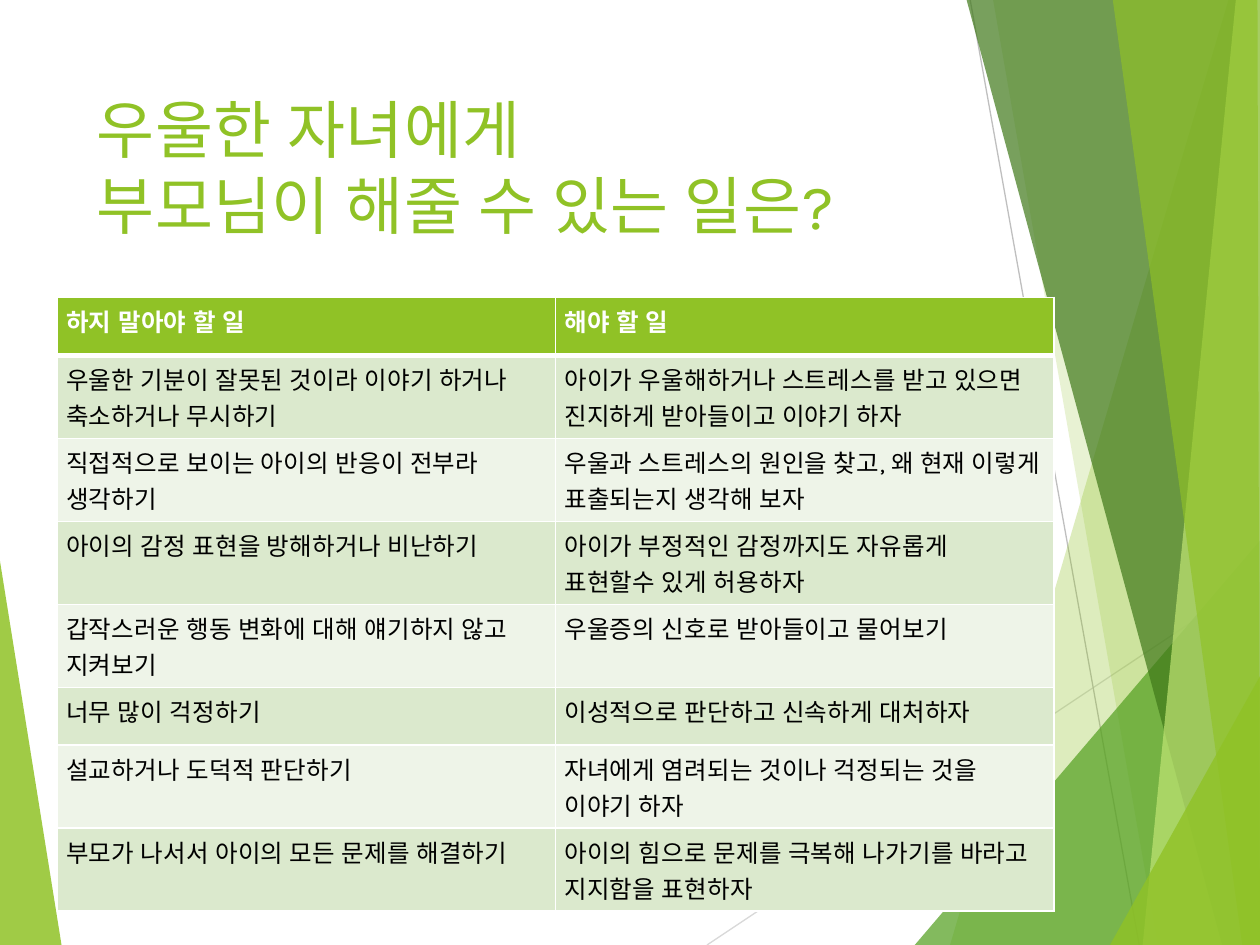
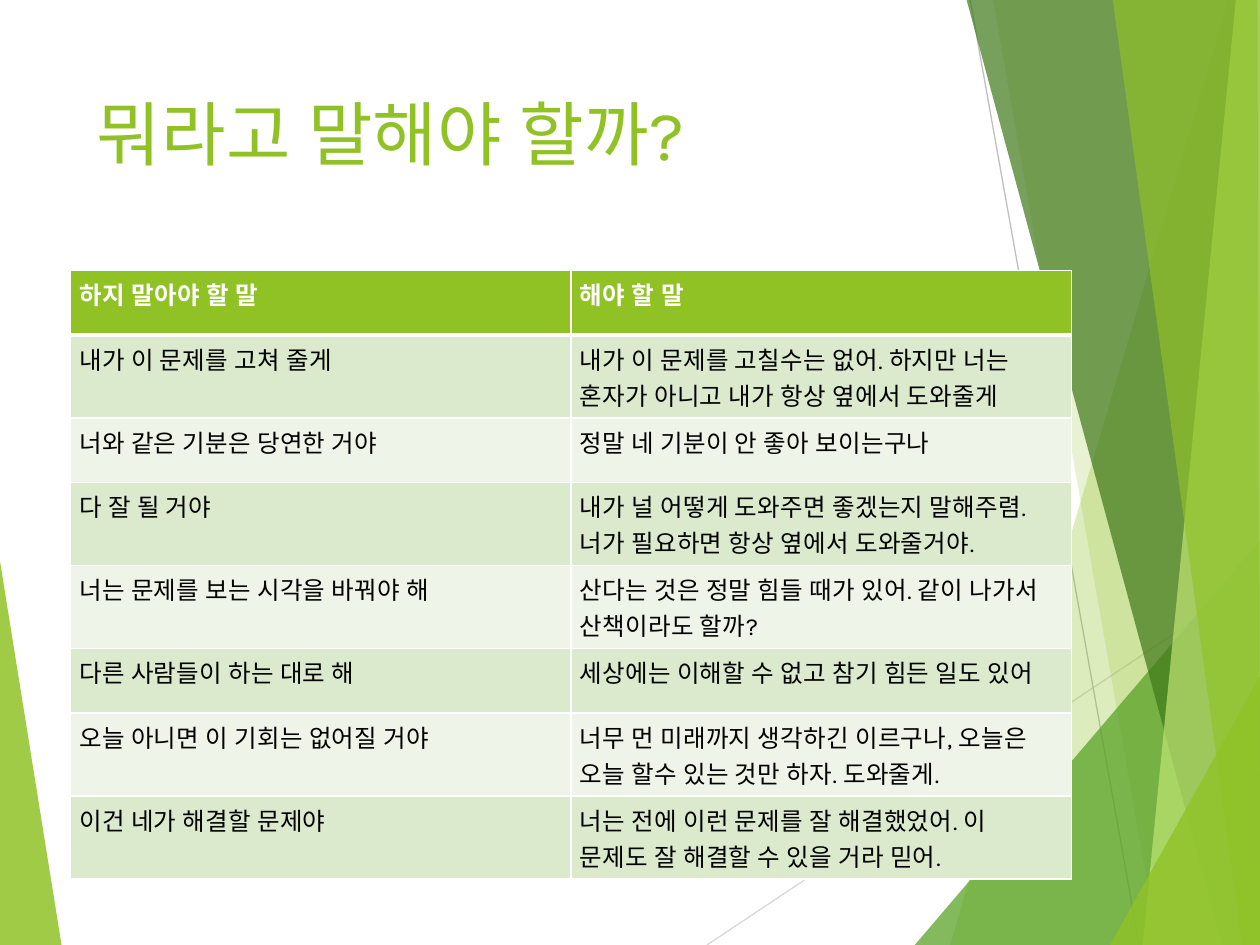
import pptx
import pptx.dml.color
import pptx.enum.lang
import pptx.enum.shapes
import pptx.enum.text
import pptx.oxml
import pptx.oxml.ns
import pptx.util

Pt = pptx.util.Pt

FONT = "Karla"
LIME = "90C226"
WHITE = "FFFFFF"
BLACK = "000000"
BODY_FILLS = ("DBE9CD", "EEF4E8")

WIDTH, HEIGHT = 720, 540
TOP, RIGHT = -0.7, 720.7
TITLE_BOX = (48.2, 48.2, 499.7, 103.7)
TITLE_TRACKING = 0.3
CELL_TRACKING = 0.12
CELL_LINE_SPACING = 1.25

LINES = [
    ((404, 540), (720.7, 329), "D9D9D9"),
    ((554.4, 0), (651, 540), "BFBFBF"),
]
FACETS = [
    ([(TOP, 316.1), (35.3, 540.7), (TOP, HEIGHT)], LIME, 85),
    ([(702, 0), (542.9, HEIGHT), (721.4, HEIGHT), (RIGHT, 0)], LIME, 30),
    ([(567.4, TOP), (661.7, HEIGHT), (RIGHT, HEIGHT), (RIGHT, TOP)], LIME, 20),
    ([(522.7, HEIGHT), (720, 308.9), (RIGHT, HEIGHT)], "54A021", 72),
    ([(552.2, TOP), (698.4, HEIGHT), (RIGHT, HEIGHT), (RIGHT, TOP)], "3F7819", 70),
    ([(706.3, TOP), (653, HEIGHT), (RIGHT, HEIGHT), (720, TOP)], "C0E474", 70),
    ([(635.8, TOP), (709.9, HEIGHT), (720, HEIGHT), (718.6, TOP)], LIME, 65),
    ([(634.3, HEIGHT), (RIGHT, 385.2), (RIGHT, HEIGHT)], LIME, 80),
]

SLIDES = [
    {
        "title": ["우울한 자녀에게 ", "부모님이 해줄 수 있는 일은?"],
        "title_size": 36,
        "table_at": (32.8, 170),
        "column_width": 284.7,
        "row_height": 33.1,
        "rows": [
            ("하지 말아야 할 일", "해야 할 일"),
            ("우울한 기분이 잘못된 것이라 이야기 하거나 축소하거나 무시하기",
             "아이가 우울해하거나 스트레스를 받고 있으면 진지하게 받아들이고 이야기 하자"),
            ("직접적으로 보이는 아이의 반응이 전부라 생각하기",
             "우울과 스트레스의 원인을 찾고, 왜 현재 이렇게 표출되는지 생각해 보자"),
            ("아이의 감정 표현을 방해하거나 비난하기",
             "아이가 부정적인 감정까지도 자유롭게 표현할수 있게 허용하자"),
            ("갑작스러운 행동 변화에 대해 얘기하지 않고 지켜보기",
             "우울증의 신호로 받아들이고 물어보기"),
            ("너무 많이 걱정하기", "이성적으로 판단하고 신속하게 대처하자"),
            ("설교하거나 도덕적 판단하기",
             "자녀에게 염려되는 것이나 걱정되는 것을 이야기 하자"),
            ("부모가 나서서 아이의 모든 문제를 해결하기",
             "아이의 힘으로 문제를 극복해 나가기를 바라고 지지함을 표현하자"),
        ],
    },
    {
        "title": ["뭐라고 말해야 할까?"],
        "title_size": 40,
        "table_at": (40.3, 154.6),
        "column_width": 286,
        "row_height": 36.9,
        "rows": [
            ("하지 말아야 할 말", "해야 할 말"),
            ("내가 이 문제를 고쳐 줄게",
             "내가 이 문제를 고칠수는 없어. 하지만 너는 혼자가 아니고 내가 항상 옆에서 도와줄게"),
            ("너와 같은 기분은 당연한 거야", "정말 네 기분이 안 좋아 보이는구나"),
            ("다 잘 될 거야",
             "내가 널 어떻게 도와주면 좋겠는지 말해주렴. 너가 필요하면 항상 옆에서 도와줄거야."),
            ("너는 문제를 보는 시각을 바꿔야 해",
             "산다는 것은 정말 힘들 때가 있어. 같이 나가서 산책이라도 할까?"),
            ("다른 사람들이 하는 대로 해", "세상에는 이해할 수 없고 참기 힘든 일도 있어"),
            ("오늘 아니면 이 기회는 없어질 거야",
             "너무 먼 미래까지 생각하긴 이르구나, 오늘은 오늘 할수 있는 것만 하자. 도와줄게."),
            ("이건 네가 해결할 문제야",
             "너는 전에 이런 문제를 잘 해결했었어. 이 문제도 잘 해결할 수 있을 거라 믿어."),
        ],
    },
]


def color(value):
    return pptx.dml.color.RGBColor.from_string(value)


def child(parent, tag, **attributes):
    element = pptx.oxml.ns.qn(tag)
    node = parent.makeelement(element, attributes)
    parent.append(node)
    return node


def fill_with(target, value):
    target.fill.solid()
    target.fill.fore_color.rgb = color(value)


def add_run(paragraph, text, size, value, tracking, bold=False):
    run = paragraph.add_run()
    run.text = text
    run.font.name = FONT
    run.font.size = Pt(size)
    run.font.bold = bold
    run.font.color.rgb = color(value)
    run.font.language_id = pptx.enum.lang.MSO_LANGUAGE_ID.KOREAN
    run.font._element.set("spc", str(round(tracking * 100)))
    child(run.font._element, "a:ea", typeface=FONT)


def add_background(slide):
    for start, end, value in LINES:
        line = slide.shapes.add_connector(
            pptx.enum.shapes.MSO_CONNECTOR.STRAIGHT, *map(Pt, start + end))
        line.line.color.rgb = color(value)
        line.line.width = Pt(0.75)
        child(line._element.spPr, "a:effectLst")
    for points, value, opacity in FACETS:
        corners = [(Pt(x), Pt(y)) for x, y in points]
        builder = slide.shapes.build_freeform(*corners[0])
        builder.add_line_segments(corners[1:], close=True)
        facet = builder.convert_to_shape()
        facet.shadow.inherit = False
        fill_with(facet, value)
        facet.line.fill.background()
        solid = facet._element.spPr.find(pptx.oxml.ns.qn("a:solidFill"))
        child(solid[0], "a:alpha", val=str(opacity * 1000))


def add_title(slide, content):
    frame = slide.shapes.add_textbox(*map(Pt, TITLE_BOX)).text_frame
    frame.word_wrap = True
    frame.vertical_anchor = pptx.enum.text.MSO_ANCHOR.TOP
    paragraph = frame.paragraphs[0]
    for index, text in enumerate(content["title"]):
        if index:
            paragraph.add_line_break()
        add_run(paragraph, text, content["title_size"], LIME, TITLE_TRACKING)


def set_borders(cell, top, bottom):
    properties = cell._tc.get_or_add_tcPr()
    widths = {"a:lnL": 1, "a:lnR": 1, "a:lnT": top, "a:lnB": bottom}
    for position, (tag, width) in enumerate(widths.items()):
        border = child(properties, tag, w=str(Pt(width)))
        child(child(border, "a:solidFill"), "a:srgbClr", val=WHITE)
        properties.insert(position, border)


def add_advice_table(slide, content):
    rows = content["rows"]
    size = (2 * content["column_width"], len(rows) * content["row_height"])
    table = slide.shapes.add_table(
        len(rows), 2, *map(Pt, content["table_at"] + size)).table
    for column in table.columns:
        column.width = Pt(content["column_width"])
    for row_index, texts in enumerate(rows):
        header = row_index == 0
        table.rows[row_index].height = Pt(content["row_height"])
        for column_index, text in enumerate(texts):
            cell = table.cell(row_index, column_index)
            cell.margin_left, cell.margin_right = Pt(5), Pt(6.5)
            cell.margin_top = cell.margin_bottom = Pt(2.7)
            fill_with(cell, LIME if header else BODY_FILLS[(row_index - 1) % 2])
            set_borders(cell, 3 if row_index == 1 else 1, 3 if header else 1)
            paragraph = cell.text_frame.paragraphs[0]
            paragraph.line_spacing = CELL_LINE_SPACING
            add_run(paragraph, text, 14, WHITE if header else BLACK,
                    CELL_TRACKING, header)


def main():
    presentation = pptx.Presentation()
    presentation.slide_width = Pt(WIDTH)
    presentation.slide_height = Pt(HEIGHT)
    for content in SLIDES:
        slide = presentation.slides.add_slide(presentation.slide_layouts[6])
        add_background(slide)
        add_title(slide, content)
        add_advice_table(slide, content)
    presentation.save("out.pptx")


if __name__ == "__main__":
    main()
